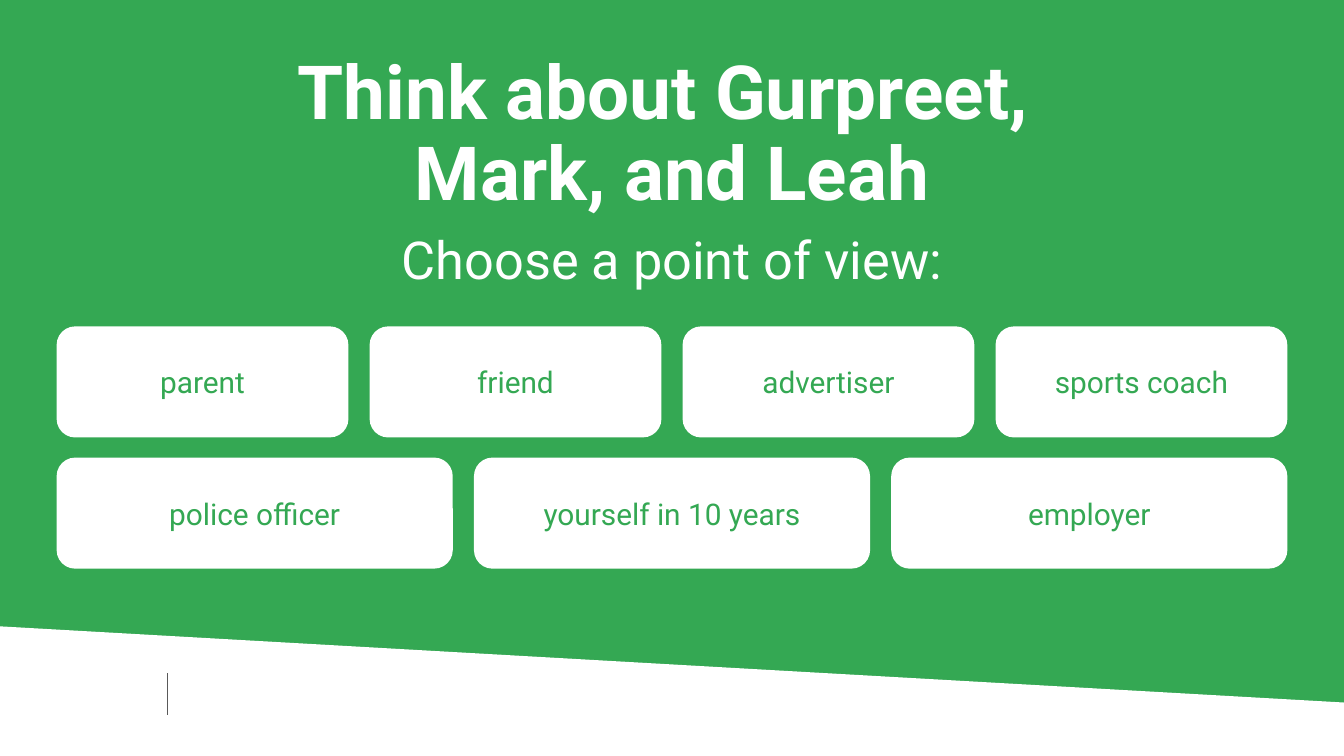
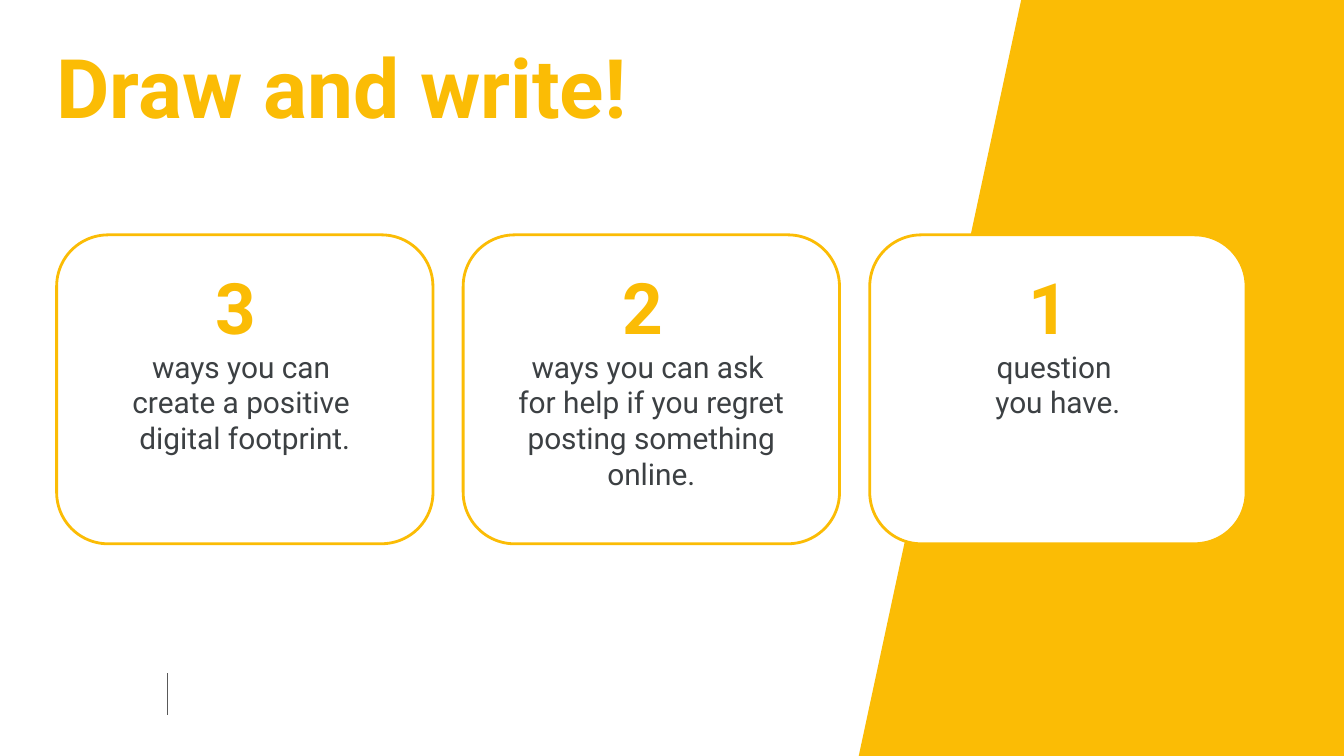
from copy import deepcopy
from dataclasses import dataclass

from lxml import etree
from pptx import Presentation
from pptx.dml.color import RGBColor
from pptx.enum.shapes import MSO_CONNECTOR, MSO_SHAPE
from pptx.enum.text import MSO_ANCHOR, PP_ALIGN
from pptx.oxml.ns import qn
from pptx.util import Cm, Pt

LEFT, CENTER = PP_ALIGN.LEFT, PP_ALIGN.CENTER
TOP, MIDDLE = MSO_ANCHOR.TOP, MSO_ANCHOR.MIDDLE
ROUNDED = MSO_SHAPE.ROUNDED_RECTANGLE
STRAIGHT = MSO_CONNECTOR.STRAIGHT

WIDTH, HEIGHT = 25.4, 14.29
MARGIN, TITLE_TOP = 1.07, 1.04
INSET = 0.25


@dataclass(frozen=True)
class Theme:
    font: str = "Roboto"
    green: str = "34A853"
    yellow: str = "FBBC05"
    white: str = "FFFFFF"
    ink: str = "3C4043"
    rule: str = "595959"
    body: int = 16
    subtitle: int = 28
    number: int = 38
    title: int = 40
    large_title: int = 44


def rgb(color):
    return RGBColor.from_string(color)


def write(frame, text, *, font, size, color, bold=False, align=LEFT, spacing=None):
    """Append text to the frame's paragraph; each newline is a line break."""
    paragraph = frame.paragraphs[0]
    paragraph.alignment = align
    if spacing:
        paragraph.line_spacing = spacing
    for index, line in enumerate(text.split("\n")):
        if index:
            paragraph.add_line_break()
            # The break takes the run's format so that it keeps the line height.
            paragraph._p[-1].append(deepcopy(run.font._element))
        run = paragraph.add_run()
        run.text = line
        run.font.name = font
        run.font.size = Pt(size)
        run.font.bold = bold
        run.font.color.rgb = rgb(color)


def row(count, left, right, gap):
    """Yield the left edge and width of equal columns."""
    width = (right - left - gap * (count - 1)) / count
    for index in range(count):
        yield left + index * (width + gap), width


class Deck:
    def __init__(self, theme):
        self.theme = theme
        self.presentation = Presentation()
        self.presentation.slide_width = Cm(WIDTH)
        self.presentation.slide_height = Cm(HEIGHT)
        self.slide = None

    def new_slide(self, background):
        self.slide = self.presentation.slides.add_slide(
            self.presentation.slide_layouts[6])
        fill = self.slide.background.fill
        fill.solid()
        fill.fore_color.rgb = rgb(background)

    def paint(self, shape, fill, outline=None):
        shape.shadow.inherit = False
        shape.fill.solid()
        shape.fill.fore_color.rgb = rgb(fill)
        if outline:
            shape.line.color.rgb = rgb(outline)
            shape.line.width = Pt(1.5)
        else:
            shape.line.fill.background()

    def panel(self, corners, fill):
        points = [(Cm(x), Cm(y)) for x, y in corners]
        builder = self.slide.shapes.build_freeform(*points[0])
        builder.add_line_segments(points[1:], close=True)
        self.paint(builder.convert_to_shape(), fill)

    def footer_divider(self):
        x = Cm(3.17)
        divider = self.slide.shapes.add_connector(
            STRAIGHT, x, Cm(12.73), x, Cm(13.51))
        divider.line.color.rgb = rgb(self.theme.rule)
        divider.line.width = Pt(0.75)
        etree.SubElement(divider._element.spPr, qn("a:effectLst"))

    def frame(self, shape, inset, anchor=TOP):
        frame = shape.text_frame
        frame.word_wrap = True
        frame.vertical_anchor = anchor
        frame.margin_left = frame.margin_right = Cm(inset)
        frame.margin_top = frame.margin_bottom = Cm(inset)
        return frame

    def text(self, text, left, top, width, height, **style):
        box = self.slide.shapes.add_textbox(
            Cm(left), Cm(top), Cm(width), Cm(height))
        write(self.frame(box, 0), text, font=self.theme.font, **style)

    def card(self, left, top, width, height, parts, outline=None, anchor=TOP):
        """Draw a rounded card; parts are (text, style) pairs in one paragraph."""
        card = self.slide.shapes.add_shape(
            ROUNDED, Cm(left), Cm(top), Cm(width), Cm(height))
        self.paint(card, self.theme.white, outline)
        frame = self.frame(card, INSET, anchor)
        for text, style in parts:
            write(frame, text, font=self.theme.font, align=CENTER, **style)


def point_of_view_slide(deck):
    theme = deck.theme
    deck.new_slide(theme.green)
    deck.panel([(0, 11.84), (0, HEIGHT), (WIDTH, HEIGHT), (WIDTH, 13.28)],
               theme.white)
    deck.footer_divider()
    deck.text("Choose a point of view:", 0, 4.29, WIDTH, 1.19,
              size=theme.subtitle, color=theme.white, align=CENTER)
    deck.text("Think about Gurpreet, \nMark, and Leah", 0, TITLE_TOP, WIDTH, 3.2,
              size=theme.title, color=theme.white, bold=True,
              align=CENTER, spacing=0.9)

    viewpoint_rows = [
        ["parent", "friend", "advertiser", "sports coach"],
        ["police officer", "yourself in 10 years", "employer"],
    ]
    height, gap = 2.1, 0.4
    style = dict(size=theme.body, color=theme.green)
    for index, viewpoints in enumerate(viewpoint_rows):
        top = 6.17 + index * 2.48
        columns = row(len(viewpoints), MARGIN, WIDTH - MARGIN, gap)
        for viewpoint, (left, width) in zip(viewpoints, columns):
            deck.card(left, top, width, height, [(viewpoint, style)], anchor=MIDDLE)


def draw_and_write_slide(deck):
    theme = deck.theme
    deck.new_slide(theme.white)
    deck.footer_divider()
    deck.panel([(WIDTH, HEIGHT), (16.23, HEIGHT), (19.3, 0), (WIDTH, 0)],
               theme.yellow)
    deck.text("Draw and write!", MARGIN, TITLE_TOP, 15.34, 1.9,
              size=theme.large_title, color=theme.yellow, bold=True, spacing=0.8)

    tasks = [
        ("3", "ways you can \ncreate a positive \ndigital footprint."),
        ("2", "ways you can ask \nfor help if you regret posting something online."),
        ("1", "question \nyou have."),
    ]
    number_style = dict(size=theme.number, color=theme.yellow, bold=True)
    task_style = dict(size=theme.body, color=theme.ink)
    columns = row(len(tasks), MARGIN, 23.55, 0.57)
    for (number, task), (left, width) in zip(tasks, columns):
        deck.card(left, 4.44, width, 5.84,
                  [(f"{number} \n", number_style), (task, task_style)],
                  outline=theme.yellow)


def main():
    deck = Deck(Theme())
    point_of_view_slide(deck)
    draw_and_write_slide(deck)
    deck.presentation.save("out.pptx")


if __name__ == "__main__":
    main()
